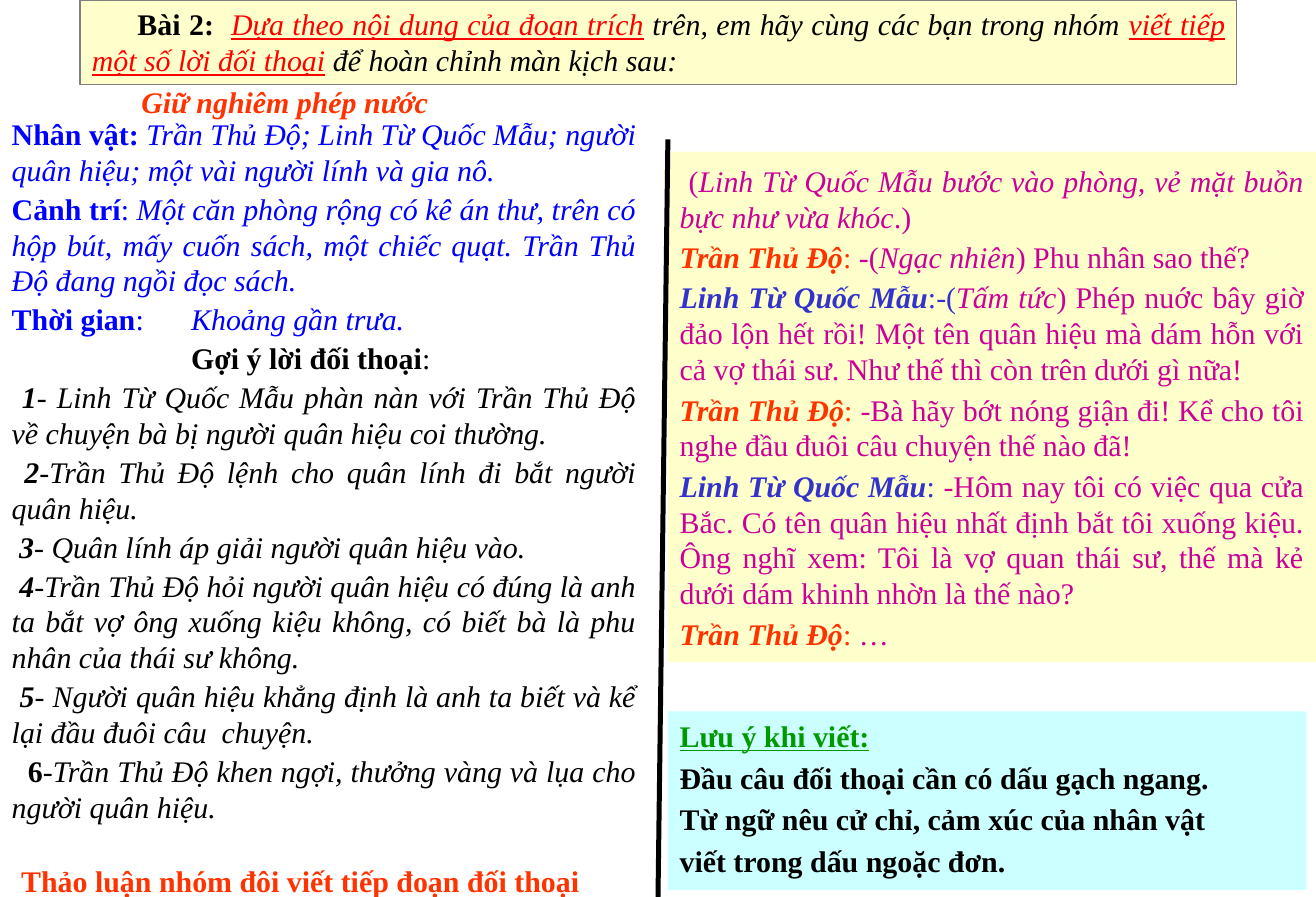
from lxml import etree
from pptx import Presentation
from pptx.dml.color import RGBColor
from pptx.enum.shapes import MSO_CONNECTOR as Connector, MSO_SHAPE as Shape
from pptx.enum.text import MSO_ANCHOR as Anchor, MSO_AUTO_SIZE as AutoSize, PP_ALIGN as Align
from pptx.oxml.ns import qn
from pptx.util import Cm, Pt

FONT, SIZE = "Times New Roman", 18
COLORS = {
    "black": "000000", "red": "FF0000", "orange": "FF3300", "blue": "0000FF",
    "indigo": "3333CC", "magenta": "CC0099", "green": "009900",
    "cream": "FFFFCC", "aqua": "CCFFFF", "grey": "808080",
}

# Content: each paragraph is a list of (text, colour, style letters b/i/u)
TASK = [[
    ("Bài 2:  ", "black", "b"),
    ("Dựa theo nội dung của đoạn trích", "red", "iu"),
    (" trên, em hãy cùng các bạn trong nhóm ", "black", "i"),
    ("viết tiếp một số lời đối thoại", "red", "iu"),
    (" để hoàn chỉnh màn kịch sau:", "black", "i"),
]]
PLAY_TITLE = [[("Giữ nghiêm phép nước", "orange", "bi")]]
SETTING = [
    [("Nhân vật: ", "blue", "b"),
     ("Trần Thủ Độ; Linh Từ Quốc Mẫu; người quân hiệu; một vài người lính và gia nô.", "blue", "i")],
    [("Cảnh trí", "blue", "b"), (": ", "blue", ""),
     ("Một căn phòng rộng có kê án thư, trên có hộp bút, mấy cuốn sách, một chiếc quạt. "
      "Trần Thủ Độ đang ngồi đọc sách.", "blue", "i")],
    [("Thời gian", "blue", "b"), (":\t", "blue", ""), ("Khoảng gần trưa.", "blue", "i")],
    [("\tGợi ý lời đối thoại", "black", "b"), (":", "black", "")],
]
HINTS = [
    (" ", "1", "bi", "- Linh Từ Quốc Mẫu phàn nàn với Trần Thủ Độ về chuyện bà bị người quân hiệu coi thường."),
    (" ", "2", "bi", "-Trần Thủ Độ lệnh cho quân lính đi bắt người quân hiệu."),
    (" ", "3", "bi", "- Quân lính áp giải người quân hiệu vào."),
    (" ", "4", "bi", "-Trần Thủ Độ hỏi người quân hiệu có đúng là anh ta bắt vợ ông xuống kiệu không, "
                     "có biết bà là phu nhân của thái sư không."),
    (" ", "5", "bi", "- Người quân hiệu khẳng định là anh ta biết và kể lại đầu đuôi câu  chuyện."),
    ("  ", "6", "b", "-Trần Thủ Độ khen ngợi, thưởng vàng và lụa cho người quân hiệu."),
]
DO = ("Trần Thủ Độ", "orange", "bi")
MAU = ("Linh Từ Quốc Mẫu", "indigo", "bi")
DIALOGUE = [
    [(" (", "magenta", ""),
     ("Linh Từ Quốc Mẫu bước vào phòng, vẻ mặt buồn bực như vừa khóc", "magenta", "i"),
     (".)", "magenta", "")],
    [DO, (": ", "orange", ""), ("-(", "magenta", ""), ("Ngạc nhiên", "magenta", "i"),
     (") Phu nhân sao thế?", "magenta", "")],
    [MAU, (":-(", "indigo", ""), ("Tấm tức", "magenta", "i"),
     (") Phép nuớc bây giờ đảo lộn hết rồi! Một tên quân hiệu mà dám hỗn với cả vợ thái sư. "
      "Như thế thì còn trên dưới gì nữa!", "magenta", "")],
    [DO, (": ", "orange", ""),
     ("-Bà hãy bớt nóng giận đi! Kể cho tôi nghe đầu đuôi câu chuyện thế nào đã!", "magenta", "")],
    [MAU, (": ", "indigo", ""),
     ("-Hôm nay tôi có việc qua cửa Bắc. Có tên quân hiệu nhất định bắt tôi xuống kiệu. "
      "Ông nghĩ xem: Tôi là vợ quan thái sư, thế mà kẻ dưới dám khinh nhờn là thế nào?", "magenta", "")],
    [DO, (":", "orange", ""), (" …", "magenta", "")],
]
NOTES = [
    [("Lưu ý khi viết:", "green", "bu")],
    [("Đầu câu đối thoại cần có dấu gạch ngang.", "black", "b")],
    [("Từ ngữ nêu cử chỉ, cảm xúc của nhân vật", "black", "b")],
    [("viết trong dấu ngoặc đơn.", "black", "b")],
]
GROUP_WORK = [[("Thảo luận nhóm đôi viết tiếp đoạn đối thoại", "orange", "b")]]


def rgb(name):
    return RGBColor.from_string(COLORS[name])


def write(box, paragraphs, gap=0.0, align=Align.JUSTIFY, anchor=Anchor.TOP,
          wrap=True, indent=None, tab=None):
    """Fill a box; gap is the space before a paragraph as a share of the text size."""
    frame = box.text_frame
    frame.word_wrap = wrap
    frame.auto_size = AutoSize.SHAPE_TO_FIT_TEXT
    frame.vertical_anchor = anchor
    for index, spans in enumerate(paragraphs):
        para = frame.add_paragraph() if index else frame.paragraphs[0]
        para.alignment = align
        para.space_before = Pt(SIZE * gap)
        props = para._p.get_or_add_pPr()
        if indent:
            props.set("indent", str(indent))
        if tab:
            stops = etree.SubElement(props, qn("a:tabLst"))
            etree.SubElement(stops, qn("a:tab"), pos=str(tab), algn="l")
        for text, color, style in spans:
            span = para.add_run()
            span.text = text
            font = span.font
            font.name, font.size = FONT, Pt(SIZE)
            font.color.rgb = rgb(color)
            font.bold, font.italic, font.underline = (letter in style for letter in "biu")


def add_panel(page, place, fill, line=None):
    panel = page.shapes.add_shape(Shape.RECTANGLE, *map(Cm, place))
    panel.shadow.inherit = False
    panel.fill.solid()
    panel.fill.fore_color.rgb = rgb(fill)
    if line:
        panel.line.color.rgb = rgb(line)
        panel.line.width = Pt(0.75)
    else:
        panel.line.fill.background()
    return panel


def add_text(page, place):
    return page.shapes.add_textbox(*map(Cm, place))


deck = Presentation()
deck.slide_width, deck.slide_height = Cm(27.94), Cm(19.05)
page = deck.slides.add_slide(deck.slide_layouts[6])

# Task statement across the top
write(add_panel(page, (1.7, 0, 24.56, 1.8), "cream", "grey"), TASK, indent=Cm(0.97))

# Left column: setting and numbered hints
hints = [[(lead, "black", "i"), (number, "black", style), (text, "black", "i")]
         for lead, number, style, text in HINTS]
write(add_text(page, (0, 2.33, 13.76, 15.57)), SETTING + hints, gap=0.1, tab=Cm(3.81))

# Right column: dialogue
write(add_panel(page, (14.18, 3.22, 13.76, 10.84), "cream"), DIALOGUE,
      gap=0.15, anchor=Anchor.MIDDLE)

# Divider between the columns
divider = page.shapes.add_connector(Connector.STRAIGHT, Cm(14.18), Cm(2.96), Cm(13.97), Cm(19.05))
divider.line.color.rgb = rgb("black")
divider.line.width = Pt(3)
etree.SubElement(divider._element.spPr, qn("a:effectLst"))

# Play title, writing notes and group task
write(add_text(page, (2.75, 1.65, 11.43, 1.02)), PLAY_TITLE, gap=0.1)
write(add_panel(page, (14.18, 15.11, 13.55, 3.79), "aqua"), NOTES, gap=0.2)
write(add_text(page, (0.2, 18.2, 12.48, 1.02)), GROUP_WORK, align=Align.LEFT, wrap=False)

deck.save("out.pptx")
